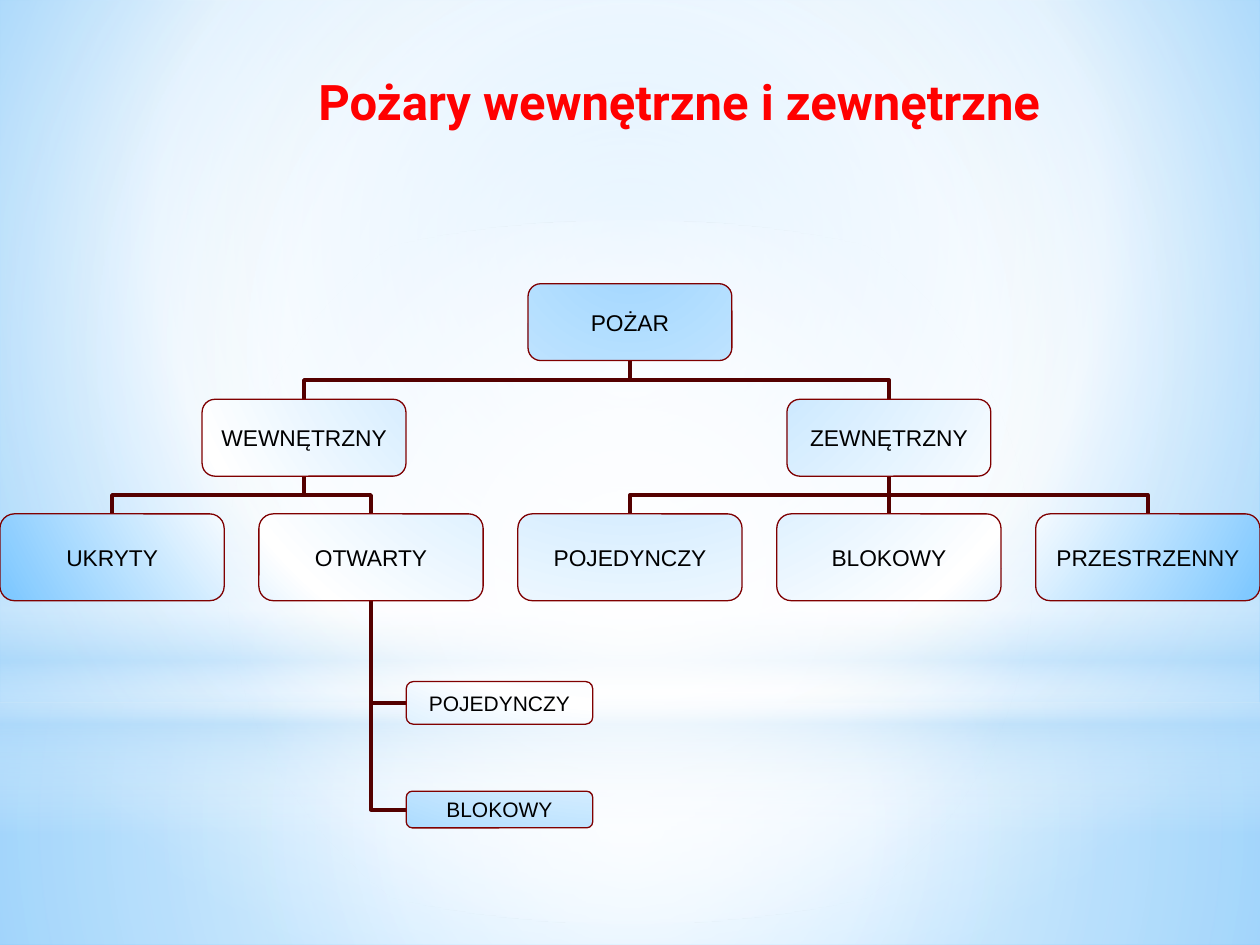
from lxml import etree
from pptx import Presentation
from pptx.dml.color import RGBColor
from pptx.enum.shapes import MSO_CONNECTOR, MSO_SHAPE
from pptx.enum.text import MSO_ANCHOR, PP_ALIGN
from pptx.oxml.ns import qn
from pptx.util import Cm, Pt

ELBOW, STRAIGHT = MSO_CONNECTOR.ELBOW, MSO_CONNECTOR.STRAIGHT
RECT, OVAL, ROUNDED = MSO_SHAPE.RECTANGLE, MSO_SHAPE.OVAL, MSO_SHAPE.ROUNDED_RECTANGLE
TOP, MIDDLE, CENTER = MSO_ANCHOR.TOP, MSO_ANCHOR.MIDDLE, PP_ALIGN.CENTER

# Content
TITLE = "Pożary wewnętrzne i zewnętrzne"
ROOT = "POŻAR"
BRANCHES = [
    ("WEWNĘTRZNY", ["UKRYTY", "OTWARTY"]),
    ("ZEWNĘTRZNY", ["POJEDYNCZY", "BLOKOWY", "PRZESTRZENNY"]),
]
OPEN_KINDS = [("POJEDYNCZY", 13.74, 0.86), ("BLOKOWY", 15.95, 0.74)]  # top, height

THEME = {
    "title": ("Roboto", 28, "FF0000"), "box": ("Arial", 13, "000000"),
    "small": ("Arial", 12, "000000"),
    "border": ("800000", 0.75), "link": ("540000", 2.25),
}

# Gradient stops: position, colour, opacity (all percentages but the colour)
BACKDROP = [(0, "9ED5FF", 100), (60, "FFFFFF", 100), (100, "5BB9FF", 100)]
BACKDROP_FOCUS = (20, 10, 20, 60)
MIDPOINT = (50, 50, 50, 50)
# Shape, left, top, width, height, stops, focus (None: vertical gradient)
LIGHTS = [
    (RECT, 0, 14.17, 25.4, 4.88,
     [(0, "FFFFFF", 91), (37, "FFFFFF", 76), (100, "B4DCFA", 79)], MIDPOINT),
    (RECT, 0, 0, 25.4, 14.17,
     [(0, "FFFFFF", 89), (48, "FFFFFF", 62), (100, "B4DCFA", 79)], MIDPOINT),
    (RECT, 0, 10.46, 25.4, 6.35,
     [(0, "FFFFFF", 0), (29, "FFFFFF", 30), (45, "B4DCFA", 40), (55, "FFFFFF", 26),
      (65, "B4DCFA", 60), (100, "FFFFFF", 0)], None),
    (OVAL, 0, 4.45, 25.4, 14.17, [(0, "FFFFFF", 100), (56, "FFFFFF", 0)], MIDPOINT),
]

# Layout in centimetres
PAGE_W, PAGE_H = 25.4, 19.05
ROOT_TOP, BRANCH_TOP, LEAF_TOP = 5.72, 8.05, 10.36
NODE_W, NODE_H = 4.11, 1.55
LEAF_W, LEAF_H = 4.52, 1.75
LEAF_COUNT = sum(len(leaves) for _, leaves in BRANCHES)
LEAF_STEP = (PAGE_W - LEAF_W) / (LEAF_COUNT - 1)
BRANCH_CENTERS = [6.13, 17.92]
KIND_LEFT, KIND_W = 8.19, 3.76


def set_gradient(parent, stops, focus):
    """Replace the solid fill of parent by a gradient."""
    gradient = etree.Element(qn("a:gradFill"), rotWithShape="1")
    stop_list = etree.SubElement(gradient, qn("a:gsLst"))
    for position, color, opacity in stops:
        stop = etree.SubElement(stop_list, qn("a:gs"), pos=str(position * 1000))
        tint = etree.SubElement(stop, qn("a:srgbClr"), val=color)
        if opacity < 100:
            etree.SubElement(tint, qn("a:alpha"), val=str(opacity * 1000))
    if focus:
        circle = etree.SubElement(gradient, qn("a:path"), path="circle")
        sides = {side: str(share * 1000) for side, share in zip("ltrb", focus)}
        etree.SubElement(circle, qn("a:fillToRect"), sides)
    else:
        etree.SubElement(gradient, qn("a:lin"), ang="5400000", scaled="0")
    parent.replace(parent.find(qn("a:solidFill")), gradient)


def set_line(line, style):
    color, width = THEME[style]
    line.color.rgb = RGBColor.from_string(color)
    line.width = Pt(width)


def write(shape, text, style, anchor, bold=False):
    frame = shape.text_frame
    frame.vertical_anchor = anchor
    para = frame.paragraphs[0]
    para.text, para.alignment = text, CENTER
    name, size, color = THEME[style]
    para.font.name, para.font.size, para.font.bold = name, Pt(size), bold
    para.font.color.rgb = RGBColor.from_string(color)
    return frame


def add_box(page, text, left, top, width, height, style="box"):
    """Rounded box through which the slide background shows."""
    box = page.shapes.add_shape(ROUNDED, Cm(left), Cm(top), Cm(width), Cm(height))
    box.shadow.inherit = False
    box._element.set("useBgFill", "1")
    set_line(box.line, "border")
    frame = write(box, text, style, MIDDLE)
    frame.word_wrap = False
    frame.margin_left = frame.margin_right = Cm(0.18)
    frame.margin_top = frame.margin_bottom = Cm(0.1)


def add_link(page, kind, x1, y1, x2, y2, turn=0):
    link = page.shapes.add_connector(kind, Cm(x1), Cm(y1), Cm(x2), Cm(y2))
    set_line(link.line, "link")
    properties = link._element.spPr
    etree.SubElement(properties, qn("a:effectLst"))
    if turn:
        properties.find(qn("a:xfrm")).set("rot", str(turn * 60000))
    return link


def link_up(page, child_x, child_top, parent_x, parent_bottom):
    """Join a child to its parent; an elbow is laid out sideways, then turned."""
    rise, shift = child_top - parent_bottom, child_x - parent_x
    if abs(shift) < 0.05:
        add_link(page, STRAIGHT, parent_x, child_top, parent_x, parent_bottom)
        return
    side = 1 if shift > 0 else -1
    mid_x, mid_y = (child_x + parent_x) / 2, (child_top + parent_bottom) / 2
    reach, half = side * rise / 2, abs(shift) / 2
    add_link(page, ELBOW, mid_x + reach, mid_y - half, mid_x - reach, mid_y + half,
             90 if side > 0 else 270)


def main():
    deck = Presentation()
    deck.slide_width, deck.slide_height = Cm(PAGE_W), Cm(PAGE_H)
    page = deck.slides.add_slide(deck.slide_layouts[6])

    # Background and light effects
    page.background.fill.solid()
    set_gradient(page._element.cSld.bg.bgPr, BACKDROP, BACKDROP_FOCUS)
    for kind, left, top, width, height, stops, focus in LIGHTS:
        light = page.shapes.add_shape(kind, Cm(left), Cm(top), Cm(width), Cm(height))
        light.shadow.inherit = False
        light.line.fill.background()
        light.fill.solid()
        set_gradient(light._element.spPr, stops, focus)

    # Title
    title = page.shapes.add_textbox(Cm(3.71), Cm(1.32), Cm(19.96), Cm(2.13))
    write(title, TITLE, "title", TOP, bold=True).word_wrap = True

    # Links and places of the tree
    boxes = [(ROOT, (PAGE_W - NODE_W) / 2, ROOT_TOP, NODE_W, NODE_H)]
    leaf_lefts = iter([index * LEAF_STEP for index in range(LEAF_COUNT)])
    for (branch, leaves), center in zip(BRANCHES, BRANCH_CENTERS):
        link_up(page, center, BRANCH_TOP, PAGE_W / 2, ROOT_TOP + NODE_H)
        boxes.append((branch, center - NODE_W / 2, BRANCH_TOP, NODE_W, NODE_H))
        for leaf in leaves:
            left = next(leaf_lefts)
            link_up(page, left + LEAF_W / 2, LEAF_TOP, center, BRANCH_TOP + NODE_H)
            boxes.append((leaf, left, LEAF_TOP, LEAF_W, LEAF_H))

    # Kinds of open fire hang from the second leaf
    trunk_x = LEAF_STEP + LEAF_W / 2
    for kind, top, height in OPEN_KINDS:
        link = add_link(page, ELBOW, trunk_x, LEAF_TOP + LEAF_H,
                        KIND_LEFT, top + height / 2, 180)
        link._element.spPr.find(qn("a:prstGeom")).set("prst", "bentConnector2")
        boxes.append((kind, KIND_LEFT, top, KIND_W, height, "small"))

    # Boxes lie above the links
    for box in boxes:
        add_box(page, *box)

    deck.save("out.pptx")


if __name__ == "__main__":
    main()
